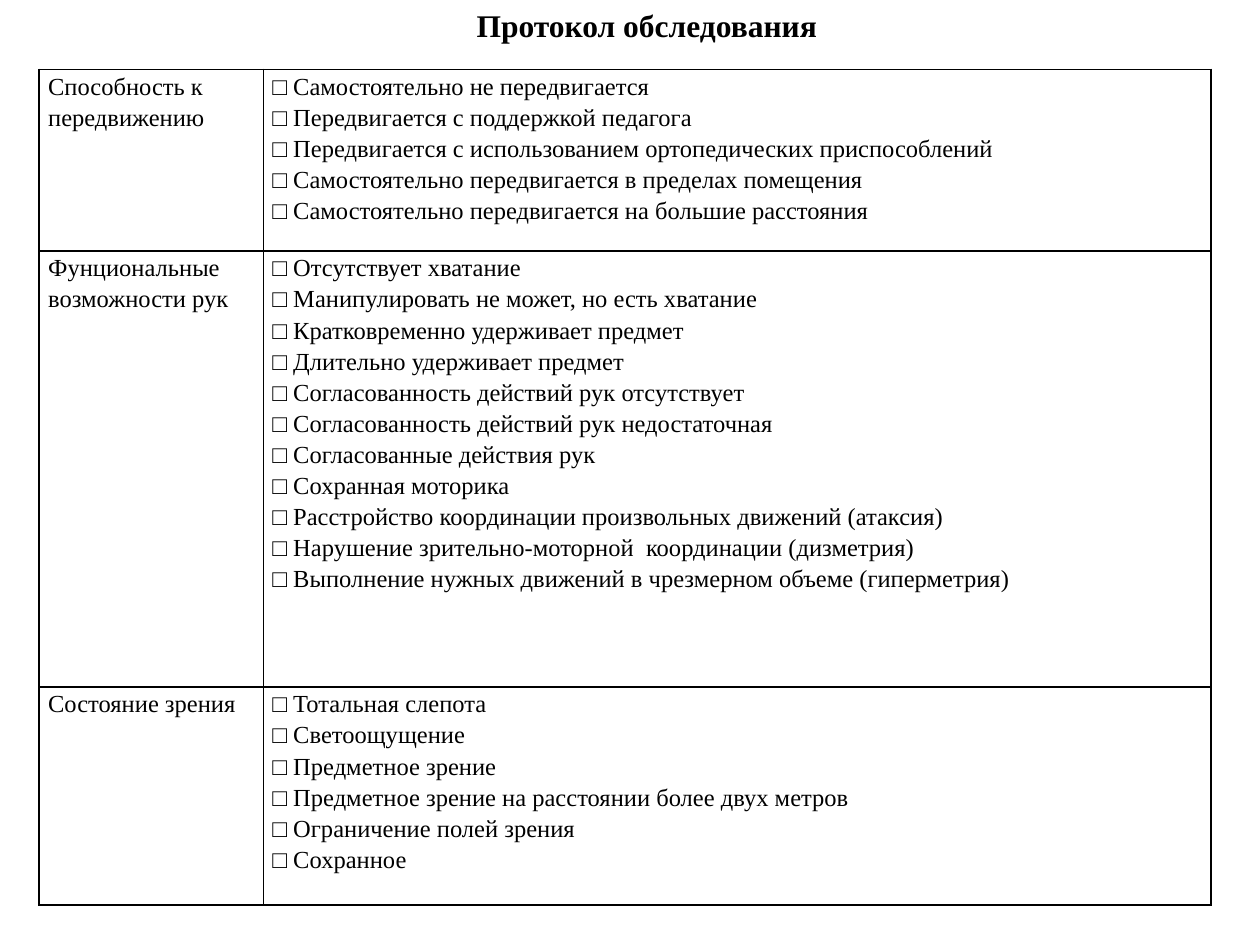
from lxml import etree
from pptx import Presentation
from pptx.dml.color import RGBColor
from pptx.enum import text
from pptx.oxml import ns
from pptx.util import Cm, Pt

COLORS = {"ink": "000000"}
FONT = "Times New Roman"
TITLE = "Протокол обследования"
SECTIONS = [
    ("Способность к передвижению", 3.66, [
        "Самостоятельно не передвигается",
        "Передвигается с поддержкой педагога",
        "Передвигается с использованием ортопедических приспособлений",
        "Самостоятельно передвигается в пределах помещения",
        "Самостоятельно передвигается на большие расстояния",
    ]),
    ("Фунциональные возможности рук", 8.79, [
        "Отсутствует хватание",
        "Манипулировать не может, но есть хватание",
        "Кратковременно удерживает предмет",
        "Длительно удерживает предмет",
        "Согласованность действий рук отсутствует",
        "Согласованность действий рук недостаточная",
        "Согласованные действия рук",
        "Сохранная моторика",
        "Расстройство координации произвольных движений (атаксия)",
        "Нарушение зрительно-моторной  координации (дизметрия)",
        "Выполнение нужных движений в чрезмерном объеме (гиперметрия)",
    ]),
    ("Состояние зрения", 4.39, [
        "Тотальная слепота",
        "Светоощущение",
        "Предметное зрение",
        "Предметное зрение на расстоянии более двух метров",
        "Ограничение полей зрения",
        "Сохранное",
    ]),
]
COLUMN_WIDTHS = [4.52, 19.1]


def format_runs(p, size, bold=False):
    for r in p.runs:
        r.font.name = FONT
        r.font.size = Pt(size)
        r.font.bold = bold
        r.font.color.rgb = RGBColor.from_string(COLORS["ink"])


def add_title(s):
    box = s.shapes.add_textbox(Cm(9.32), Cm(0), Cm(7.44), Cm(1.02))
    tf = box.text_frame
    tf.word_wrap = False
    tf.auto_size = text.MSO_AUTO_SIZE.SHAPE_TO_FIT_TEXT
    tf.vertical_anchor = text.MSO_ANCHOR.MIDDLE
    tf.text = TITLE
    p = tf.paragraphs[0]
    p.alignment = text.PP_ALIGN.CENTER
    format_runs(p, 18, bold=True)


def set_borders(cell):
    """Draw a thin line on all four sides; lines must precede the fill in tcPr."""
    tc_pr = cell._tc.get_or_add_tcPr()
    for i, side in enumerate(("lnL", "lnR", "lnT", "lnB")):
        ln = etree.Element(ns.qn(f"a:{side}"), w=str(Pt(1)))
        fill = etree.SubElement(ln, ns.qn("a:solidFill"))
        etree.SubElement(fill, ns.qn("a:srgbClr"), val=COLORS["ink"])
        tc_pr.insert(i, ln)


def fill_cell(cell, lines):
    cell.margin_left = cell.margin_right = Cm(0.18)
    cell.margin_top = cell.margin_bottom = Cm(0)
    cell.fill.background()
    set_borders(cell)
    cell.text_frame.text = "\n".join(lines)
    for p in cell.text_frame.paragraphs:
        p.line_spacing = 1.15
        format_runs(p, 14)


def add_protocol_table(s):
    height = sum(section[1] for section in SECTIONS)
    frame = s.shapes.add_table(len(SECTIONS), len(COLUMN_WIDTHS), Cm(0.79), Cm(1.4),
                               Cm(sum(COLUMN_WIDTHS)), Cm(height))
    table = frame.table
    table.first_row = table.horz_banding = False
    for column, width in zip(table.columns, COLUMN_WIDTHS):
        column.width = Cm(width)
    for row, (heading, row_height, options) in zip(table.rows, SECTIONS):
        row.height = Cm(row_height)
        fill_cell(row.cells[0], [heading])
        fill_cell(row.cells[1], [f"□ {option}" for option in options])


def main():
    prs = Presentation()
    prs.slide_width, prs.slide_height = Cm(25.4), Cm(19.05)
    s = prs.slides.add_slide(prs.slide_layouts[6])
    add_title(s)
    add_protocol_table(s)
    prs.save("out.pptx")


if __name__ == "__main__":
    main()
